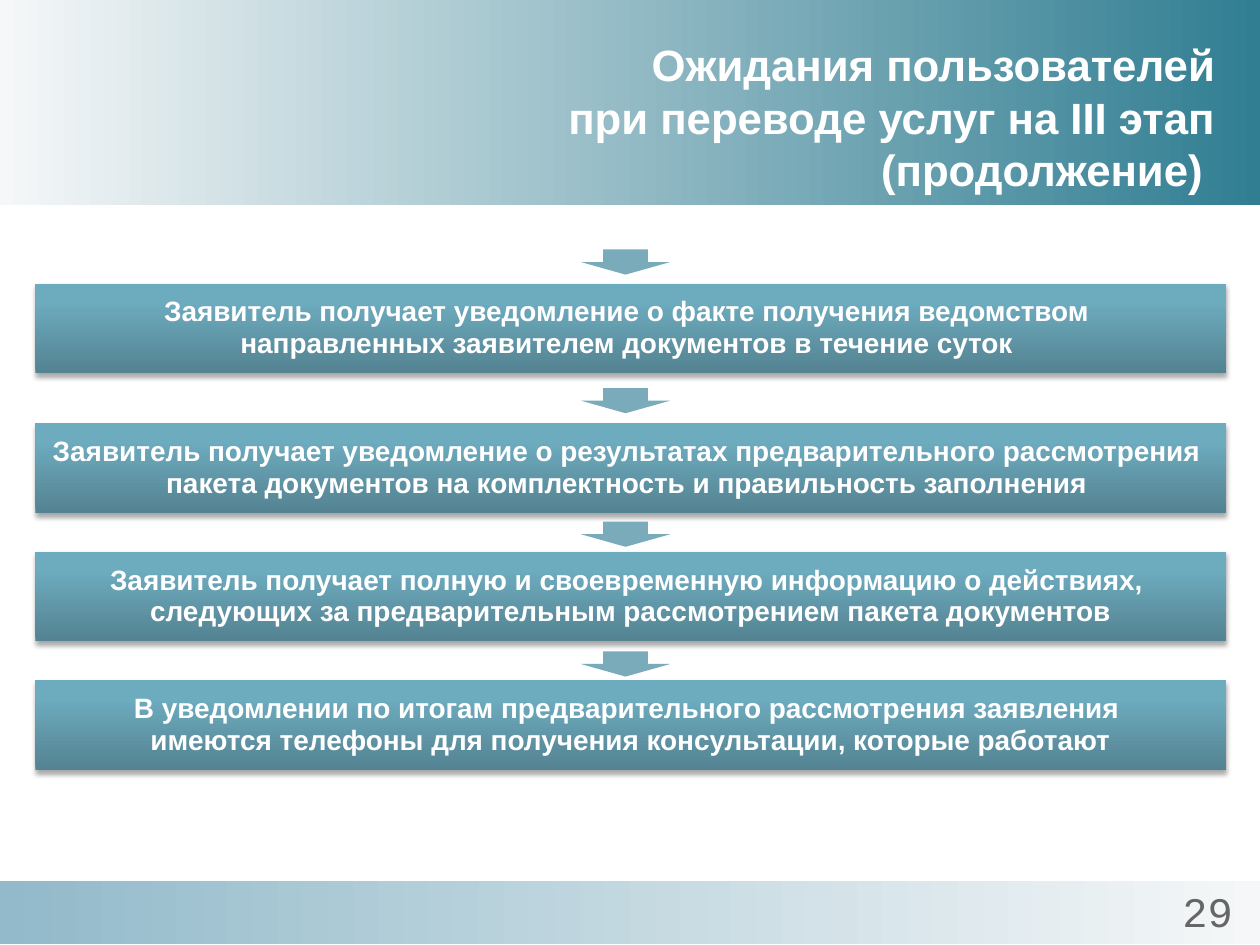
"""Build the slide on user expectations at stage III of the service transfer."""
from dataclasses import dataclass

from pptx import Presentation
from pptx.dml.color import RGBColor as Rgb
from pptx.enum.shapes import MSO_SHAPE as Kind
from pptx.enum.text import MSO_ANCHOR as Anchor, MSO_AUTO_SIZE as Fit, PP_ALIGN as Align
from pptx.oxml import parse_xml
from pptx.oxml.ns import nsdecls, qn
from pptx.util import Inches, Pt


@dataclass(frozen=True)
class Theme:
    white: str = "FFFFFF"
    gray: str = "666666"
    arrow: str = "7AABBA"
    head: tuple = ((0, "F5F7F8"), (100, "317E92"))
    foot: tuple = ((0, "F5F7F8"), (100, "92BACA"))
    step: tuple = ((0, "548392"), (80, "6DABBE"), (100, "6CACC0"))
    font: str = "Arial"
    mono: str = "Courier New"
    title: int = 25
    body: int = 16
    page: int = 24


def write(frame, text, font, size, color, bold=False, align=Align.CENTER,
          anchor=Anchor.TOP, wrap=True, space=None, fit=None):
    frame.word_wrap = wrap
    frame.vertical_anchor = anchor
    if fit is not None:
        frame.auto_size = fit
    frame.text = text
    for par in frame.paragraphs:
        par.alignment = align
        par.line_spacing = space
        for run in par.runs:
            run.font.name = font
            run.font.size = Pt(size)
            run.font.bold = bold
            run.font.color.rgb = Rgb.from_string(color)


class Deck:
    def __init__(self, theme, cols=100, rows=75):
        self.theme = theme
        self.file = Presentation()
        self.file.slide_width, self.file.slide_height = Inches(10), Inches(7.5)
        self.col = self.file.slide_width / cols
        self.row = self.file.slide_height / rows
        self.slide = self.file.slides.add_slide(self.file.slide_layouts[6])

    def place(self, x, y, w, h):
        return [round(n) for n in (x * self.col, y * self.row, w * self.col, h * self.row)]

    def shape(self, kind, *box):
        item = self.slide.shapes.add_shape(kind, *self.place(*box))
        item.shadow.inherit = False
        item.line.fill.background()
        return item

    def band(self, *box, stops, angle):
        item = self.shape(Kind.RECTANGLE, *box)
        item.fill.background()
        marks = "".join(f'<a:gs pos="{at * 1000}"><a:srgbClr val="{color}"/></a:gs>'
                        for at, color in stops)
        grad = parse_xml(f'<a:gradFill {nsdecls("a")} rotWithShape="1"><a:gsLst>{marks}</a:gsLst>'
                         f'<a:lin ang="{angle * 60000}" scaled="0"/></a:gradFill>')
        props = item.element.spPr
        props.replace(props.find(qn("a:noFill")), grad)
        return item

    def step(self, *box, text):
        look = self.theme
        item = self.band(*box, stops=look.step, angle=270)
        item.element.spPr.find(qn("a:effectLst")).append(parse_xml(
            f'<a:outerShdw {nsdecls("a")} blurRad="{Pt(3.1)}" dist="{Pt(1.8)}" dir="5400000" '
            'rotWithShape="0"><a:srgbClr val="000000"><a:alpha val="35000"/></a:srgbClr>'
            '</a:outerShdw>'))
        write(item.text_frame, text, look.font, look.body, look.white, bold=True,
              anchor=Anchor.MIDDLE, wrap=False, space=0.93)

    def arrow(self, *box):
        item = self.shape(Kind.DOWN_ARROW, *box)
        item.fill.solid()
        item.fill.fore_color.rgb = Rgb.from_string(self.theme.arrow)

    def label(self, *box, text, **form):
        item = self.slide.shapes.add_textbox(*self.place(*box))
        write(item.text_frame, text, **form)


STEPS = (
    (19.8, 22.5, "Заявитель получает уведомление о факте получения ведомством \n"
                 "направленных заявителем документов в течение суток "),
    (30.8, 33.6, "Заявитель получает уведомление о результатах предварительного рассмотрения \n"
                 "пакета документов на комплектность и правильность заполнения "),
    (41.4, 43.8, "Заявитель получает полную и своевременную информацию о действиях, \n"
                 "следующих за предварительным рассмотрением пакета документов"),
    (51.7, 54, "В уведомлении по итогам предварительного рассмотрения заявления \n"
               "имеются телефоны для получения консультации, которые работают"),
)


def main():
    look = Theme()
    deck = Deck(look)
    deck.band(0, 0, 100, 16.3, stops=look.head, angle=0)
    deck.band(0, 69.9, 100, 5, stops=look.foot, angle=180)
    deck.label(38.1, 3, 59.3, 12.5,
               text="Ожидания пользователей\vпри переводе услуг на III этап\v(продолжение) ",
               font=look.font, size=look.title, color=look.white, bold=True,
               align=Align.RIGHT, anchor=Anchor.MIDDLE)
    deck.label(91.7, 69.8, 8.3, 5.2, text="29", font=look.mono, size=look.page,
               color=look.gray, fit=Fit.SHAPE_TO_FIT_TEXT)
    for tip, top, text in STEPS:
        deck.step(2.8, top, 94.5, 7.1, text=text)
        deck.arrow(46.1, tip, 7.1, 2)
    deck.file.save("out.pptx")


if __name__ == "__main__":
    main()
